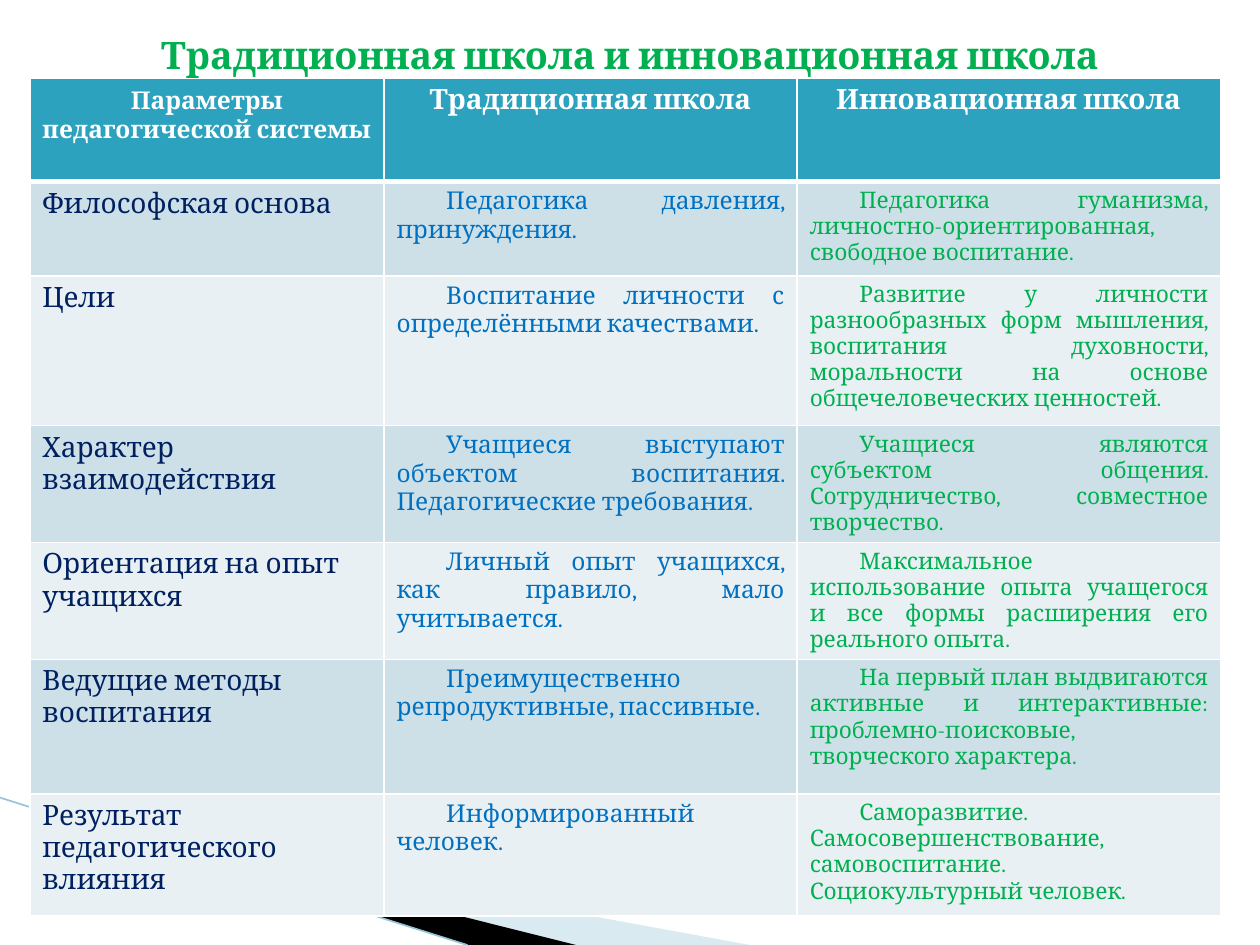
"""Build a slide that compares the traditional and the innovative school."""
import lxml.etree
import pptx
import pptx.dml.color
import pptx.enum.text
import pptx.oxml.ns
import pptx.util

Cm, Pt = pptx.util.Cm, pptx.util.Pt
qn = pptx.oxml.ns.qn
ALIGN = pptx.enum.text.PP_ALIGN
FONT = "Cambria"
COLORS = {
    "white": "FFFFFF", "head": "2DA2BF", "dark": "CDE0E8", "light": "E8F0F4",
    "navy": "002060", "blue": "0070C0", "green": "00B050",
    "black": "000000", "pale": "A0CBDC", "edge": "97C5D8",
}
TITLE = "Традиционная школа и инновационная школа"
HEADS = [
    [("Параметры", 14), (" ", 16), ("педагогической системы", 14)],
    [("Традиционная школа", 16)],
    [("Инновационная школа", 16)],
]
ROWS = [
    ("Философская основа",
     "Педагогика давления, принуждения.",
     "Педагогика гуманизма, личностно-ориентированная, свободное воспитание."),
    ("Цели",
     "Воспитание личности с определёнными качествами.",
     "Развитие у личности разнообразных форм мышления, воспитания духовности, "
     "моральности на основе общечеловеческих ценностей."),
    ("Характер взаимодействия",
     "Учащиеся выступают объектом воспитания. Педагогические требования.",
     "Учащиеся являются субъектом общения. Сотрудничество, совместное творчество."),
    ("Ориентация на опыт учащихся",
     "Личный опыт учащихся, как правило, мало учитывается.",
     "Максимальное использование опыта учащегося и все формы расширения его "
     "реального опыта."),
    ("Ведущие методы воспитания",
     "Преимущественно репродуктивные, пассивные.",
     "На первый план выдвигаются активные и интерактивные: "
     "проблемно-поисковые, творческого характера."),
    ("Результат педагогического влияния",
     "Информированный человек.",
     "Саморазвитие. Самосовершенствование, самовоспитание. "
     "Социокультурный человек."),
]
STYLES = [(16, "navy"), (14, "blue"), (13, "green")]
WIDTHS = [7.14, 8.33, 8.53]
HEIGHTS = [2.08, 1.9, 3.02, 2.24, 2.24, 2.72, 2.46]
WEDGES = [
    ("pale", 40, [(1.4, 16.54), (15.11, 19.05), (11.58, 19.05), (1.4, 16.51)]),
    ("black", 100, [(1.35, 16.48), (11.61, 19.05), (9.45, 19.05), (1.37, 16.51)]),
]


def rgb(name):
    return pptx.dml.color.RGBColor.from_string(COLORS[name])


def style(run, size, color, bold):
    font = run.font
    font.name, font.size, font.bold = FONT, Pt(size), bold
    font.color.rgb = rgb(color)


def wedge(shapes, color, alpha, points):
    start, *rest = [(Cm(x), Cm(y)) for x, y in points]
    pen = shapes.build_freeform(*start)
    pen.add_line_segments(rest, close=True)
    shape = pen.convert_to_shape()
    shape.shadow.inherit = False
    shape.line.fill.background()
    shape.fill.solid()
    shape.fill.fore_color.rgb = rgb(color)
    if alpha < 100:
        tone = next(shape.fill._xPr.iter(qn("a:srgbClr")))
        lxml.etree.SubElement(tone, qn("a:alpha"), val=str(alpha * 1000))


def border(cell, sides):
    props = cell._tc.get_or_add_tcPr()
    for side, width in sides.items():
        line = lxml.etree.SubElement(props, qn("a:ln" + side), w=str(Pt(width)))
        fill = lxml.etree.SubElement(line, qn("a:solidFill"))
        lxml.etree.SubElement(fill, qn("a:srgbClr"), val=COLORS["white"])


def paint(cell, row, color):
    border(cell, {"L": 1, "R": 1, "T": 3 if row == 1 else 1, "B": 1 if row else 3})
    cell.fill.solid()
    cell.fill.fore_color.rgb = rgb(color)


def fill_table(table):
    for col, width in zip(table.columns, WIDTHS):
        col.width = Cm(width)
    for row, height in zip(table.rows, HEIGHTS):
        row.height = Cm(height)
    for c, parts in enumerate(HEADS):
        cell = table.cell(0, c)
        paint(cell, 0, "head")
        para = cell.text_frame.paragraphs[0]
        para.alignment = ALIGN.CENTER
        for text, size in parts:
            run = para.add_run()
            run.text = text
            style(run, size, "white", True)
    for r, texts in enumerate(ROWS, 1):
        for c, (text, (size, color)) in enumerate(zip(texts, STYLES)):
            cell = table.cell(r, c)
            paint(cell, r, "dark" if r % 2 else "light")
            para = cell.text_frame.paragraphs[0]
            para.text = text
            style(para.runs[0], size, color, False)
            if c:
                para.alignment = ALIGN.JUSTIFY
                props = para._p.get_or_add_pPr()
                props.set("marL", "0")
                props.set("indent", str(Cm(1)))


def set_title(shape):
    shape.left, shape.top, shape.width, shape.height = map(Cm, (1.27, 0.79, 22.86, 0.99))
    frame = shape.text_frame
    frame.text = TITLE
    frame.auto_size = pptx.enum.text.MSO_AUTO_SIZE.NONE
    frame.vertical_anchor = pptx.enum.text.MSO_ANCHOR.BOTTOM
    frame.margin_top, frame.margin_bottom = 0, Cm(0.22)
    para = frame.paragraphs[0]
    para.alignment = ALIGN.CENTER
    style(para.runs[0], 21.6, "green", True)


def main():
    deck = pptx.Presentation()
    deck.slide_width, deck.slide_height = Cm(25.4), Cm(19.05)
    slide = deck.slides.add_slide(deck.slide_layouts[5])
    shapes = slide.shapes
    for item in WEDGES:
        wedge(shapes, *item)
    line = shapes.add_connector(1, Cm(0), Cm(16.08), Cm(9.42), Cm(19.05))
    line.line.color.rgb = rgb("edge")
    line.line.width = Pt(0.95)
    lxml.etree.SubElement(line._element.spPr, qn("a:effectLst"))
    grid = shapes.add_table(len(HEIGHTS), len(WIDTHS), Cm(0.6), Cm(1.58),
                            Cm(sum(WIDTHS)), Cm(sum(HEIGHTS)))
    fill_table(grid.table)
    set_title(shapes.title)
    deck.save("out.pptx")


if __name__ == "__main__":
    main()
